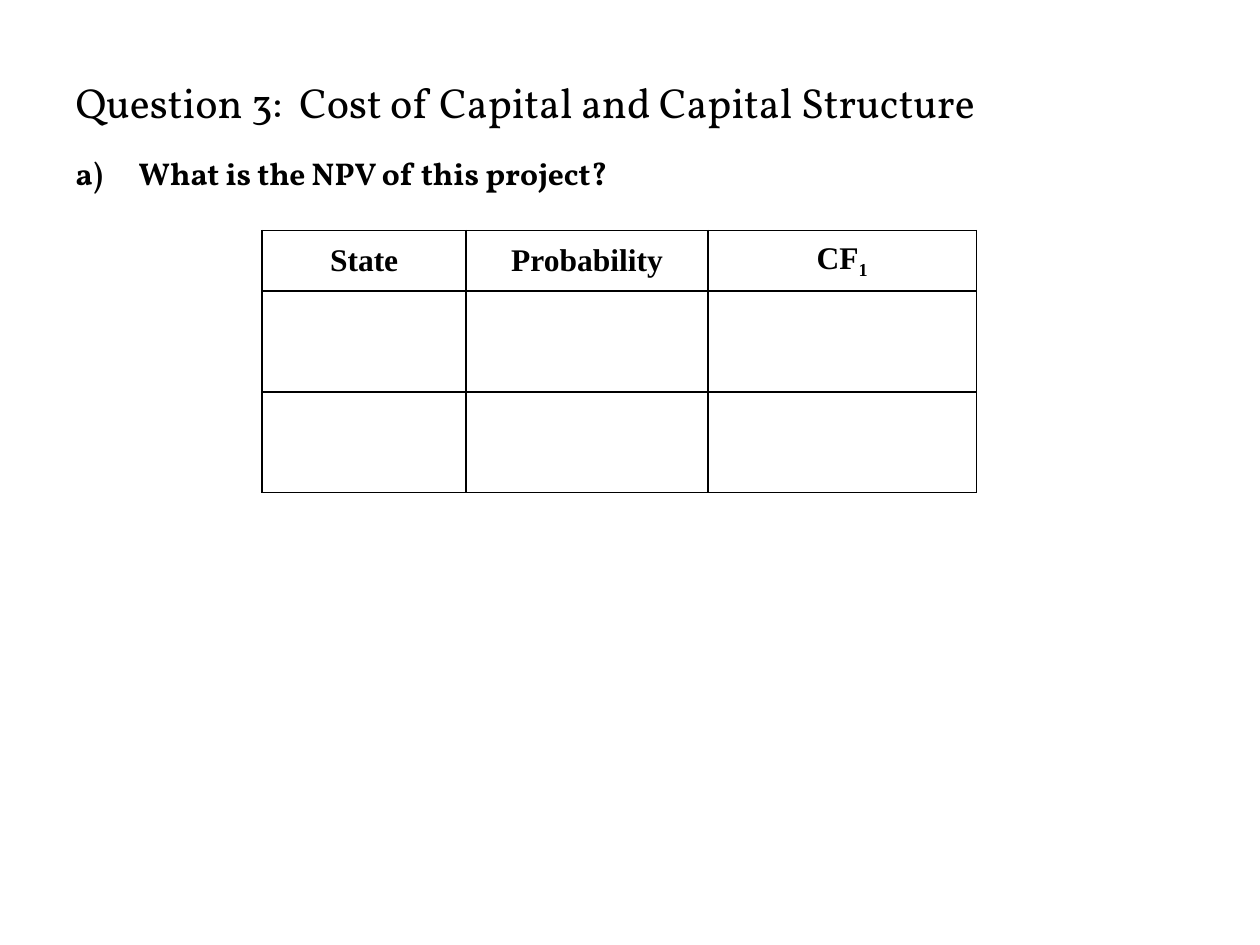
"""Build the cost of capital question slide with its blank state table."""
from dataclasses import dataclass

from lxml import etree
from pptx import Presentation
from pptx.dml.color import RGBColor
from pptx.enum.text import MSO_ANCHOR, PP_ALIGN
from pptx.oxml.ns import qn
from pptx.util import Inches, Pt

LEFT, CENTER = PP_ALIGN.LEFT, PP_ALIGN.CENTER
MIDDLE = MSO_ANCHOR.MIDDLE
TITLE_AND_CONTENT = 1


@dataclass(frozen=True)
class Theme:
    """Colours, fonts and sizes of the slide."""
    ink: str = "000000"
    paper: str = "FFFFFF"
    text_font: str = "Vollkorn"
    table_font: str = "Times New Roman"
    title_size: int = 24
    body_size: int = 18
    border: int = 1


THEME = Theme()
COLUMN_WIDTHS = (1.62, 1.92, 2.13)
ROW_HEIGHTS = (0.48, 0.8, 0.8)
HEADINGS = (("State", ""), ("Probability", ""), ("CF", "1"))


def add_run(paragraph, text, font, size, bold=False, baseline=0):
    """Append one formatted run to a paragraph."""
    run = paragraph.add_run()
    run.text = text
    run.font.name = font
    run.font.size = Pt(size)
    run.font.bold = bold
    run.font.color.rgb = RGBColor.from_string(THEME.ink)
    if baseline:
        run.font._element.set("baseline", str(baseline * 1000))


def place(shape, left, top, width, height):
    """Move and size a shape in inches."""
    shape.left, shape.top = Inches(left), Inches(top)
    shape.width, shape.height = Inches(width), Inches(height)


def fill_title(shape, text):
    """Write the left-aligned slide title."""
    place(shape, 0.5, 0.33, 9, 0.95)
    shape.text_frame.vertical_anchor = MIDDLE
    paragraph = shape.text_frame.paragraphs[0]
    paragraph.alignment = LEFT
    add_run(paragraph, text, THEME.text_font, THEME.title_size)


def fill_question(shape, text):
    """Write a lettered question with a hanging indent."""
    place(shape, 0.5, 1.17, 9, 5.83)
    paragraph = shape.text_frame.paragraphs[0]
    properties = paragraph._p.get_or_add_pPr()
    properties.set("marL", str(Inches(0.5)))
    properties.set("indent", str(-Inches(0.5)))
    etree.SubElement(properties, qn("a:buFont"), typeface=THEME.text_font)
    etree.SubElement(properties, qn("a:buAutoNum"), type="alphaLcParenR")
    add_run(paragraph, text, THEME.text_font, THEME.body_size, bold=True)


def style_cell(cell):
    """Give a cell a plain fill and a thin border on every side."""
    properties = cell._tc.get_or_add_tcPr()
    for side in ("a:lnL", "a:lnR", "a:lnT", "a:lnB"):
        line = etree.SubElement(properties, qn(side), w=str(Pt(THEME.border)))
        fill = etree.SubElement(line, qn("a:solidFill"))
        etree.SubElement(fill, qn("a:srgbClr"), val=THEME.ink)
    cell.fill.solid()
    cell.fill.fore_color.rgb = RGBColor.from_string(THEME.paper)


def fill_heading(cell, text, subscript):
    """Write a centred column heading with an optional subscript."""
    cell.vertical_anchor = MIDDLE
    cell.margin_left = cell.margin_right = Inches(0.07)
    cell.margin_top = cell.margin_bottom = 0
    paragraph = cell.text_frame.paragraphs[0]
    paragraph.alignment = CENTER
    add_run(paragraph, text, THEME.table_font, THEME.body_size, bold=True)
    if subscript:
        add_run(paragraph, subscript, THEME.table_font, THEME.body_size,
                bold=True, baseline=-25)


def add_state_table(slide):
    """Add the table of states, with blank rows to fill in."""
    table = slide.shapes.add_table(
        len(ROW_HEIGHTS), len(COLUMN_WIDTHS), Inches(2.08), Inches(1.83),
        Inches(sum(COLUMN_WIDTHS)), Inches(sum(ROW_HEIGHTS))).table
    table.first_row = table.horz_banding = False
    for column, width in zip(table.columns, COLUMN_WIDTHS):
        column.width = Inches(width)
    for row, height in zip(table.rows, ROW_HEIGHTS):
        row.height = Inches(height)
    for cell in table.iter_cells():
        style_cell(cell)
    for cell, heading in zip(table.rows[0].cells, HEADINGS):
        fill_heading(cell, *heading)


def main():
    """Build and save the slide."""
    presentation = Presentation()
    presentation.slide_width, presentation.slide_height = Inches(10), Inches(7.5)
    layout = presentation.slide_layouts[TITLE_AND_CONTENT]
    slide = presentation.slides.add_slide(layout)
    fill_title(slide.shapes.title,
               "Question 3:  Cost of Capital and Capital Structure")
    fill_question(slide.placeholders[1], "What is the NPV of this project?")
    add_state_table(slide)
    presentation.save("out.pptx")


if __name__ == "__main__":
    main()
